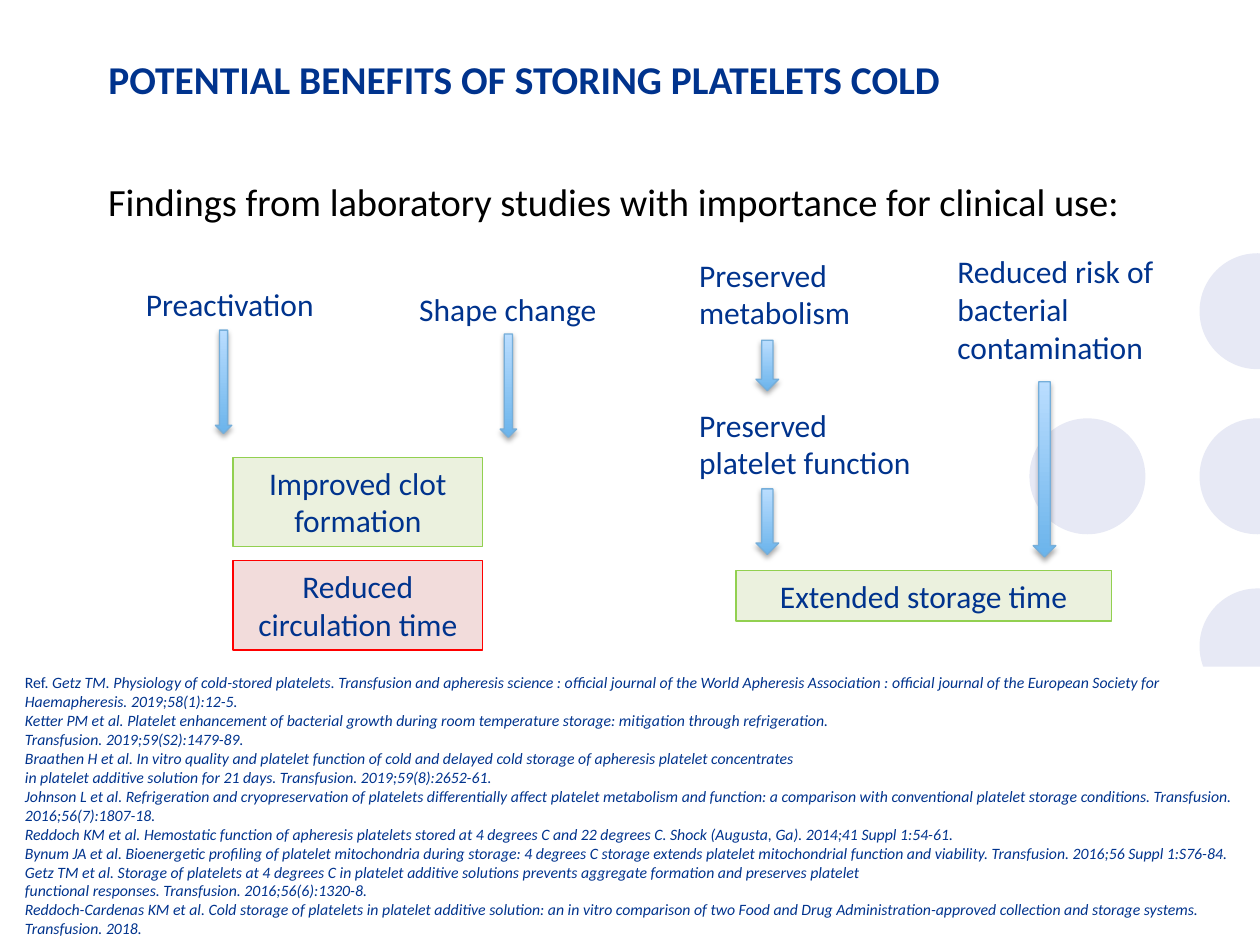
from lxml import etree
from pptx import Presentation
from pptx import util as u
from pptx.dml.color import RGBColor
from pptx.enum import shapes, text
from pptx.oxml.ns import qn

PX = u.Inches(1) // 100  # one px is a hundredth of an inch
FONT = "Calibri"
NAVY, GREEN, PALE_GREEN = "00338D", "92D050", "EBF1DE"
RED, PALE_RED = "FF0000", "F2DCDB"

REFERENCES = [
    "Getz TM. Physiology of cold-stored platelets. Transfusion and apheresis science : official journal of "
    "the World Apheresis Association : official journal of the European Society for",
    "Haemapheresis. 2019;58(1):12-5.",
    "Ketter PM et al. Platelet enhancement of bacterial growth during room temperature storage: "
    "mitigation through refrigeration.",
    "Transfusion. 2019;59(S2):1479-89.",
    "Braathen H et al. In vitro quality and platelet function of cold and delayed cold storage of "
    "apheresis platelet concentrates",
    "in platelet additive solution for 21 days. Transfusion. 2019;59(8):2652-61.",
    "Johnson L et al. Refrigeration and cryopreservation of platelets differentially affect platelet "
    "metabolism and function: a comparison with conventional platelet storage conditions. "
    "Transfusion. 2016;56(7):1807-18.",
    "Reddoch KM et al. Hemostatic function of apheresis platelets stored at 4 degrees C and 22 degrees C. "
    "Shock (Augusta, Ga). 2014;41 Suppl 1:54-61.",
    "Bynum JA et al. Bioenergetic profiling of platelet mitochondria during storage: 4 degrees C storage "
    "extends platelet mitochondrial function and viability. Transfusion. 2016;56 Suppl 1:S76-84.",
    "Getz TM et al. Storage of platelets at 4 degrees C in platelet additive solutions prevents aggregate "
    "formation and preserves platelet",
    "functional responses. Transfusion. 2016;56(6):1320-8.",
    "Reddoch-Cardenas KM et al. Cold storage of platelets in platelet additive solution: an in vitro "
    "comparison of two Food and Drug Administration-approved collection and storage systems. "
    "Transfusion. 2018.",
]


def rgb(value):
    return RGBColor.from_string(value)


def emu(*lengths):
    return [length * PX for length in lengths]


def style(font, size, color=NAVY, bold=False, italic=False):
    font.name, font.size, font.color.rgb = FONT, u.Pt(size), rgb(color)
    font.bold, font.italic = bold, italic


def add_shape(s, kind, box, fill, line=None):
    sp = s.shapes.add_shape(kind, *emu(*box))
    sp.shadow.inherit = False
    sp.fill.solid()
    sp.fill.fore_color.rgb = rgb(fill)
    if line:
        sp.line.color.rgb = rgb(line)
        sp.line.width = u.Pt(0.75)
    else:
        sp.line.fill.background()
    return sp


def write(sp, words, size=18, color=NAVY, align=text.PP_ALIGN.LEFT):
    tf = sp.text_frame
    tf.word_wrap = True
    tf.vertical_anchor = text.MSO_ANCHOR.TOP
    p = tf.paragraphs[0]
    p.text, p.alignment = words, align
    style(p.font, size, color)


def add_label(s, box, words, **options):
    write(s.shapes.add_textbox(*emu(*box)), words, **options)


def add_result(s, box, words, fill, line):
    sp = add_shape(s, shapes.MSO_SHAPE.RECTANGLE, box, fill, line)
    write(sp, words, align=text.PP_ALIGN.CENTER)


def add_arrow(s, box):
    sp = add_shape(s, shapes.MSO_SHAPE.DOWN_ARROW, box, "BADDFF", "75AEDA")
    sp.fill.gradient()
    sp.fill.gradient_angle = 90
    for stop, color in zip(sp.fill.gradient_stops, ("6BB4EB", "BADDFF")):
        stop.color.rgb = rgb(color)
    # Soft shadow below the arrow
    effects = sp._element.spPr.find(qn("a:effectLst"))
    shadow = etree.SubElement(effects, qn("a:outerShdw"), blurRad=str(u.Pt(3.1)),
                              dist=str(u.Pt(1.8)), dir="5400000", rotWithShape="0")
    black = etree.SubElement(shadow, qn("a:srgbClr"), val="000000")
    etree.SubElement(black, qn("a:alpha"), val="35000")


def add_circles(s):
    for x, y in ((952, 201), (952, 332), (817, 332), (952, 467)):
        add_shape(s, shapes.MSO_SHAPE.OVAL, (x, y, 92, 92), "E7E9F5")


def add_heading(s, x, y, w):
    title = s.shapes.title
    title.left, title.top, title.width, title.height = emu(x, y, w, 110)
    write(title, "POTENTIAL BENEFITS OF STORING PLATELETS COLD", 22.5)
    title.text_frame.paragraphs[0].font.bold = True
    add_label(s, (x, y + 97, w, 59),
              "Findings from laboratory studies with importance for clinical use:",
              size=22, color="000000")


def add_clot_flow(s, x, y):
    add_label(s, (x, y, 198, 40), "Preactivation")
    add_label(s, (x + 198, y + 4, 198, 40), "Shape change", align=text.PP_ALIGN.CENTER)
    add_arrow(s, (x + 65, y + 41, 13, 82))
    add_arrow(s, (x + 291, y + 44, 13, 82))
    add_result(s, (x + 79, y + 142, 198, 71), "Improved clot formation", PALE_GREEN, GREEN)
    add_result(s, (x + 79, y + 224, 198, 71), "Reduced circulation time", PALE_RED, RED)


def add_storage_flow(s, x, y):
    add_label(s, (x, y + 3, 198, 71), "Preserved metabolism")
    add_label(s, (x, y + 122, 198, 71), "Preserved platelet function")
    add_label(s, (x + 205, y, 198, 101), "Reduced risk of bacterial contamination")
    add_arrow(s, (x + 55, y + 75, 18, 40))
    add_arrow(s, (x + 55, y + 193, 18, 52))
    add_arrow(s, (x + 275, y + 108, 18, 139))
    add_result(s, (x + 39, y + 258, 298, 40), "Extended storage time", PALE_GREEN, GREEN)


def add_references(s, box):
    sp = add_shape(s, shapes.MSO_SHAPE.RECTANGLE, box, "FFFFFF")
    write(sp, "Ref. ", 9)
    tf = sp.text_frame
    for i, reference in enumerate(REFERENCES):
        p = tf.add_paragraph() if i else tf.paragraphs[0]
        p.alignment = text.PP_ALIGN.LEFT
        style(p.font, 9, italic=i > 0)
        r = p.add_run()
        r.text = reference
        r.font.italic = True


def main():
    prs = Presentation()
    prs.slide_width, prs.slide_height = emu(1000, 750)
    s = prs.slides.add_slide(prs.slide_layouts[5])
    add_circles(s)
    add_heading(s, 76, 39, 839)
    add_references(s, (10, 529, 990, 221))
    add_clot_flow(s, 106, 221)
    add_storage_flow(s, 545, 195)
    prs.save("out.pptx")


if __name__ == "__main__":
    main()
